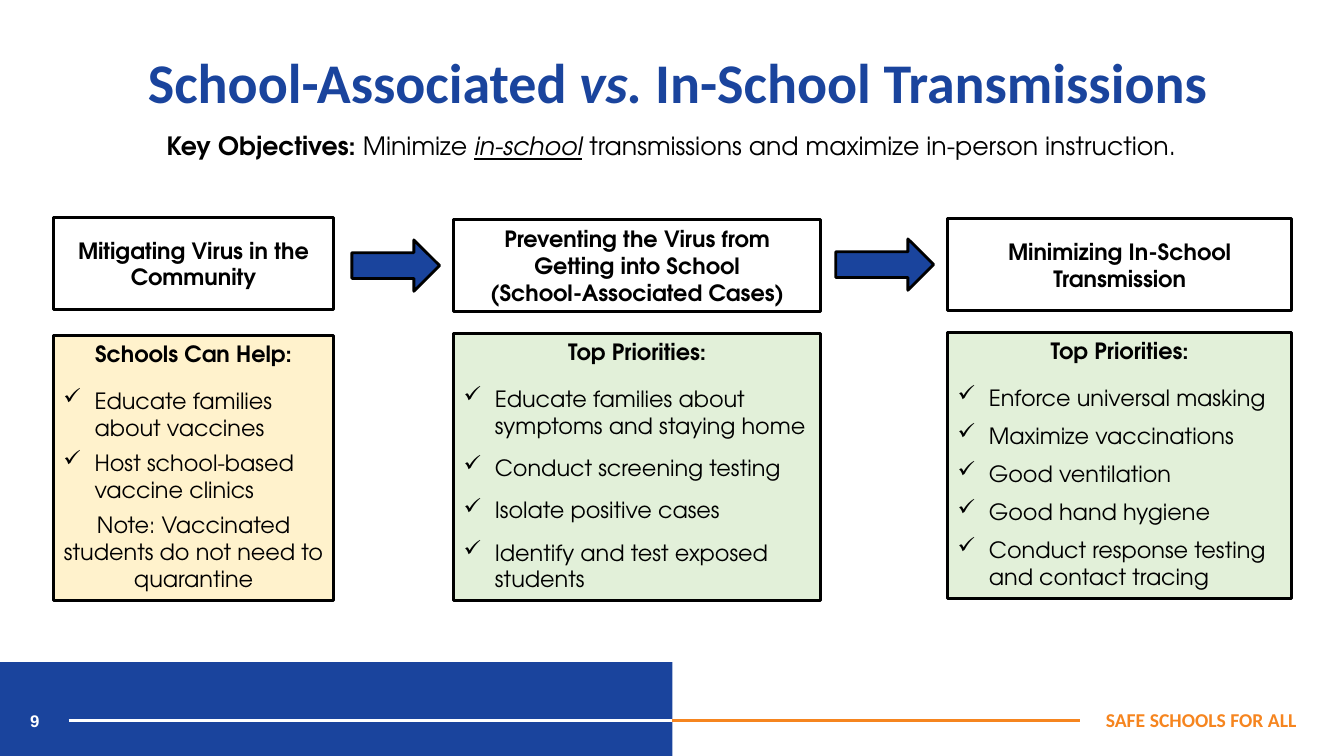
from dataclasses import dataclass

from lxml import etree
from pptx import Presentation
from pptx.dml.color import RGBColor
from pptx.enum.shapes import MSO_CONNECTOR, MSO_SHAPE
from pptx.enum.text import MSO_ANCHOR, PP_ALIGN
from pptx.oxml.ns import qn
from pptx.util import Inches, Pt

RECTANGLE, RIGHT_ARROW = MSO_SHAPE.RECTANGLE, MSO_SHAPE.RIGHT_ARROW
STRAIGHT = MSO_CONNECTOR.STRAIGHT
TOP, MIDDLE = MSO_ANCHOR.TOP, MSO_ANCHOR.MIDDLE
LEFT, CENTER, RIGHT = PP_ALIGN.LEFT, PP_ALIGN.CENTER, PP_ALIGN.RIGHT


@dataclass(frozen=True)
class Theme:
    blue: RGBColor = RGBColor(0x1A, 0x44, 0x9D)
    orange: RGBColor = RGBColor(0xF6, 0x85, 0x1F)
    cream: RGBColor = RGBColor(0xFF, 0xF2, 0xCC)
    green: RGBColor = RGBColor(0xE2, 0xF0, 0xD9)
    white: RGBColor = RGBColor(0xFF, 0xFF, 0xFF)
    black: RGBColor = RGBColor(0, 0, 0)
    title_font: str = "Calibri"
    body_font: str = "TeX Gyre Adventor"
    number_font: str = "Arial"
    title: int = 40
    subtitle: int = 18
    body: int = 16
    footer: int = 14
    number: int = 12
    outline: float = 2
    rule: float = 2.25
    heading_gap: int = 14


THEME = Theme()
HEADER_HEIGHT = 0.91
ARROW_HEIGHT = 0.51

# left, width, header top, header, list top, list height, fill, gap, heading, items, note
COLUMNS = [
    (0.53, 2.78, 2.16, ["Mitigating Virus in the Community"],
     3.33, 2.63, THEME.cream, 6, "Schools Can Help:",
     ["Educate families about vaccines", "Host school-based vaccine clinics"],
     "Note: Vaccinated students do not need to quarantine"),
    (4.5, 3.64, 2.18,
     ["Preventing the Virus from Getting into School", "(School-Associated Cases)"],
     3.31, 2.65, THEME.green, 11, "Top Priorities:",
     ["Educate families about symptoms and staying home",
      "Conduct screening testing", "Isolate positive cases",
      "Identify and test exposed students"], None),
    (9.4, 3.41, 2.17, ["Minimizing In-School Transmission"],
     3.3, 2.64, THEME.green, 8, "Top Priorities:",
     ["Enforce universal masking", "Maximize vaccinations", "Good ventilation",
      "Good hand hygiene", "Conduct response testing and contact tracing"], None),
]
ARROWS = [(3.49, 2.38, 0.87), (8.29, 2.37, 0.97)]


def style_run(run, size, font, color, bold=False):
    run.font.size = Pt(size)
    run.font.name = font
    run.font.color.rgb = color
    run.font.bold = bold


def add_panel(slide, kind, left, top, width, height, fill=None, outlined=True):
    panel = slide.shapes.add_shape(
        kind, Inches(left), Inches(top), Inches(width), Inches(height))
    panel.shadow.inherit = False
    if fill is None:
        panel.fill.background()
    else:
        panel.fill.solid()
        panel.fill.fore_color.rgb = fill
    if outlined:
        panel.line.color.rgb = THEME.black
        panel.line.width = Pt(THEME.outline)
    else:
        panel.line.fill.background()
    return panel


def add_label(slide, left, top, width, height, pieces, size, font, color,
              align=LEFT, anchor=TOP):
    """Add one line of text from (text, bold) pieces and return its runs."""
    frame = slide.shapes.add_textbox(
        Inches(left), Inches(top), Inches(width), Inches(height)).text_frame
    frame.word_wrap = True
    frame.vertical_anchor = anchor
    line = frame.paragraphs[0]
    line.alignment = align
    for text, bold in pieces:
        run = line.add_run()
        run.text = text
        style_run(run, size, font, color, bold)
    return line.runs


def add_rule(slide, start, end, y, color):
    rule = slide.shapes.add_connector(
        STRAIGHT, Inches(start), Inches(y), Inches(end), Inches(y))
    rule.line.color.rgb = color
    rule.line.width = Pt(THEME.rule)
    etree.SubElement(rule._element.spPr, qn("a:effectLst"))


def add_check_mark(paragraph):
    properties = paragraph._p.get_or_add_pPr()
    properties.set("marL", str(Inches(0.31)))
    properties.set("indent", str(-Inches(0.31)))
    etree.SubElement(properties, qn("a:buChar")).set("char", "✓")


def write_paragraphs(panel, texts, anchor):
    """Fill a panel with centred body text and return its paragraphs."""
    frame = panel.text_frame
    frame.word_wrap = True
    frame.vertical_anchor = anchor
    frame.text = "\n".join(texts)
    for paragraph in frame.paragraphs:
        paragraph.alignment = CENTER
        style_run(paragraph.runs[0], THEME.body, THEME.body_font, THEME.black)
    return frame.paragraphs


def add_header(slide, left, top, width, lines):
    panel = add_panel(slide, RECTANGLE, left, top, width, HEADER_HEIGHT)
    for paragraph in write_paragraphs(panel, lines, MIDDLE):
        paragraph.runs[0].font.bold = True


def add_checklist(slide, left, top, width, height, fill, gap, heading, items, note):
    panel = add_panel(slide, RECTANGLE, left, top, width, height, fill)
    texts = [heading, *items] + ([note] if note else [])
    title, *entries = write_paragraphs(panel, texts, TOP)
    title.runs[0].font.bold = True
    title.space_after = Pt(THEME.heading_gap)
    for entry in entries:
        entry.space_after = Pt(gap)
    for entry in entries[:len(items)]:
        entry.alignment = LEFT
        add_check_mark(entry)


def add_footer(slide):
    add_panel(slide, RECTANGLE, 0, 6.57, 6.67, 0.93, THEME.blue, outlined=False)
    add_label(slide, 0.2, 6.95, 0.95, 0.4, [("9", True)], THEME.number,
              THEME.number_font, THEME.white, anchor=MIDDLE)
    add_rule(slide, 0.68, 10.54, 7.15, THEME.white)
    add_label(slide, 10.11, 6.97, 2.85, 0.34, [("SAFE SCHOOLS FOR ALL", True)],
              THEME.footer, THEME.title_font, THEME.orange, RIGHT)
    add_rule(slide, 6.67, 10.71, 7.15, THEME.orange)


def add_titles(slide):
    title = add_label(
        slide, 0.96, 0.42, 11.52, 0.77,
        [("School-Associated ", True), ("vs.", True),
         (" In-School Transmissions", True)],
        THEME.title, THEME.title_font, THEME.blue, CENTER)
    title[1].font.italic = True
    objectives = add_label(
        slide, 0.96, 1.24, 11.4, 0.4,
        [("Key Objectives: ", True), ("Minimize ", False), ("in-school", False),
         (" transmissions and maximize in-person instruction.", False)],
        THEME.subtitle, THEME.body_font, THEME.black, CENTER)
    objectives[2].font.italic = True
    objectives[2].font.underline = True


def main():
    deck = Presentation()
    deck.slide_width, deck.slide_height = Inches(13.33), Inches(7.5)
    slide = deck.slides.add_slide(deck.slide_layouts[6])
    add_footer(slide)
    add_titles(slide)
    for left, width, header_top, header, list_top, *checklist in COLUMNS:
        add_header(slide, left, header_top, width, header)
        add_checklist(slide, left, list_top, width, *checklist)
    for left, top, width in ARROWS:
        add_panel(slide, RIGHT_ARROW, left, top, width, ARROW_HEIGHT, THEME.blue)
    deck.save("out.pptx")


if __name__ == "__main__":
    main()
